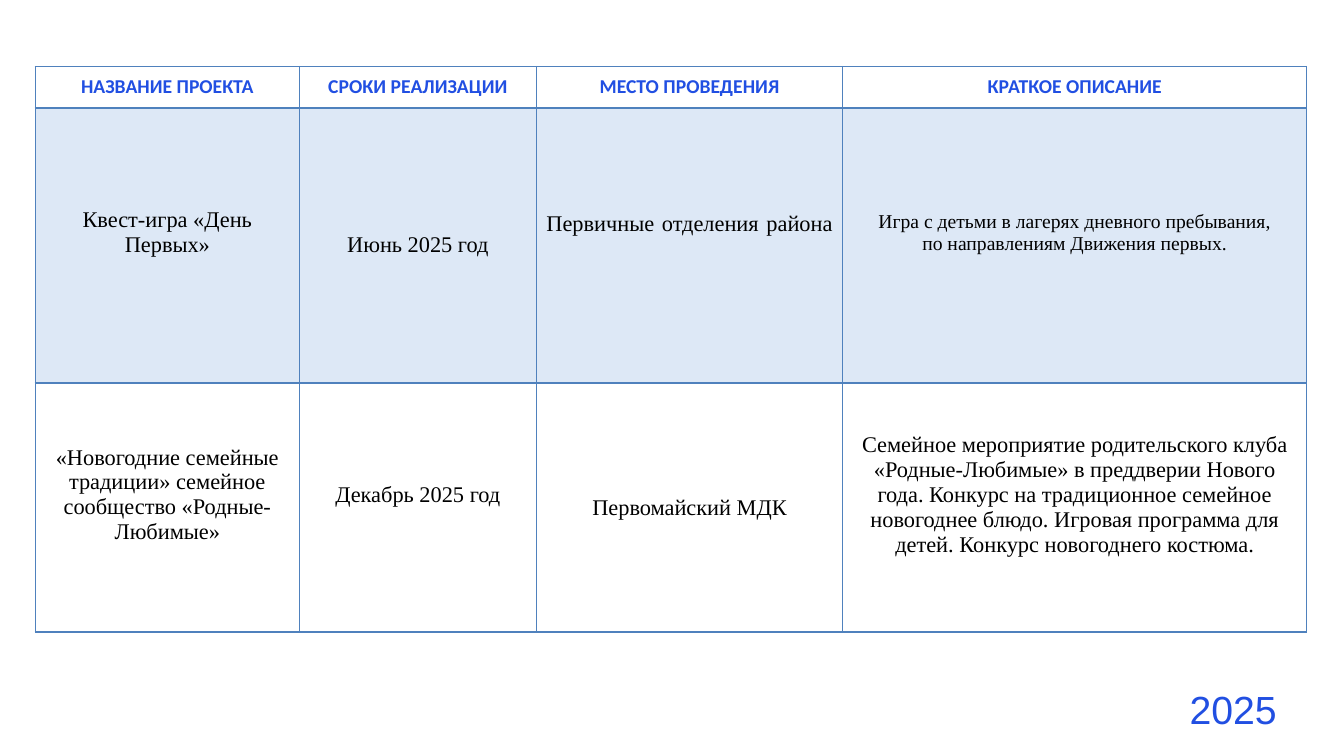
"""Build the slide with the table of 2025 projects."""
import dataclasses

import lxml.etree
import pptx
import pptx.dml.color
import pptx.enum.text
import pptx.oxml.ns
import pptx.util

Inches = pptx.util.Inches
Pt = pptx.util.Pt
Align = pptx.enum.text.PP_ALIGN
Anchor = pptx.enum.text.MSO_ANCHOR
qn = pptx.oxml.ns.qn


@dataclasses.dataclass(frozen=True)
class Theme:
    """Colours, fonts and type sizes of the slide."""
    accent: str = "214FE2"
    ink: str = "000000"
    border: str = "4F81BD"
    band: str = "558ED5"
    band_alpha: int = 20
    heading_font: str = "Calibri"
    body_font: str = "Times New Roman"
    year_font: str = "Arial"
    small: int = 14
    normal: int = 16
    large: int = 28


def solid_line(tag, color, width):
    """Return a solid line element of the given tag, colour and width in points."""
    line = lxml.etree.Element(qn(tag), w=str(Pt(width)))
    fill = lxml.etree.SubElement(line, qn("a:solidFill"))
    lxml.etree.SubElement(fill, qn("a:srgbClr"), val=color)
    return line


def write_text(frame, text, *, font, size, color, bold=False, align=Align.CENTER, outline=None):
    """Fill a text frame with one paragraph per line of text."""
    frame.word_wrap = True
    for index, line in enumerate(text.split("\n")):
        para = frame.add_paragraph() if index else frame.paragraphs[0]
        para.text = line
        para.alignment = align
        for span in para.runs:
            span.font.name = font
            span.font.size = Pt(size)
            span.font.bold = bold
            span.font.color.rgb = pptx.dml.color.RGBColor.from_string(color)
            if outline:
                span.font._element.insert(0, solid_line("a:ln", color, outline))


class ProjectPage:
    """Hold the theme and the current slide, and draw its elements."""

    def __init__(self, deck, theme):
        """Add a blank slide to the deck."""
        self.theme = theme
        self.page = deck.slides.add_slide(deck.slide_layouts[6])

    def text_box(self, text, left, top, width, height, **style):
        """Add a text box centred vertically."""
        box = self.page.shapes.add_textbox(Inches(left), Inches(top), Inches(width), Inches(height))
        box.text_frame.vertical_anchor = Anchor.MIDDLE
        write_text(box.text_frame, text, **style)

    def table(self, left, top, widths, heights):
        """Add an unbanded table with the given column widths and row heights."""
        frame = self.page.shapes.add_table(
            len(heights), len(widths), Inches(left), Inches(top),
            Inches(sum(widths)), Inches(sum(heights)))
        table = frame.table
        table.first_row = table.horz_banding = False
        for column, width in zip(table.columns, widths):
            column.width = Inches(width)
        for row, height in zip(table.rows, heights):
            row.height = Inches(height)
        return table

    def cell(self, cell, text, *, banded=False, top_line=1, bottom_line=1,
             anchor=Anchor.MIDDLE, margin_top=0.05, margin_bottom=0.05, **style):
        """Fill, border and write one table cell."""
        cell.vertical_anchor = anchor
        cell.margin_top = Inches(margin_top)
        cell.margin_bottom = Inches(margin_bottom)
        write_text(cell.text_frame, text, **style)
        properties = cell._tc.get_or_add_tcPr()
        if banded:
            cell.fill.solid()
            cell.fill.fore_color.rgb = pptx.dml.color.RGBColor.from_string(self.theme.band)
            color = properties.find(".//" + qn("a:srgbClr"))
            lxml.etree.SubElement(color, qn("a:alpha"), val=str(self.theme.band_alpha * 1000))
        else:
            cell.fill.background()
        sides = {"a:lnL": 1, "a:lnR": 1, "a:lnT": top_line, "a:lnB": bottom_line}
        for index, (tag, width) in enumerate(sides.items()):
            properties.insert(index, solid_line(tag, self.theme.border, width))


def main():
    """Build and save the deck."""
    deck = pptx.Presentation()
    deck.slide_width, deck.slide_height = Inches(13.33), Inches(7.5)
    theme = Theme()
    page = ProjectPage(deck, theme)

    page.text_box("2025", 9.37, 6.74, 3.39, 0.58, font=theme.year_font,
                  size=theme.large, color=theme.accent, align=Align.RIGHT)

    raised = {"margin_bottom": 0.3}
    headings = ["НАЗВАНИЕ ПРОЕКТА", "СРОКИ РЕАЛИЗАЦИИ", "МЕСТО ПРОВЕДЕНИЯ", "КРАТКОЕ ОПИСАНИЕ"]
    projects = [
        [("Квест-игра «День Первых»", raised),
         ("Июнь 2025 год", {}),
         ("Первичные отделения района\v",
          {"anchor": Anchor.TOP, "margin_top": 1.03, "align": Align.JUSTIFY}),
         ("Игра с детьми в лагерях дневного пребывания,\nпо направлениям Движения первых.",
          {"size": theme.small, **raised})],
        [("«Новогодние семейные традиции» семейное сообщество «Родные-Любимые»", raised),
         ("Декабрь 2025 год", raised),
         ("Первомайский МДК", {}),
         ("Семейное мероприятие родительского клуба «Родные-Любимые» в преддверии Нового года. "
          "Конкурс на традиционное семейное новогоднее блюдо. Игровая программа для детей. "
          "Конкурс новогоднего костюма.", raised)],
    ]
    table = page.table(0.35, 0.66, [2.62, 2.35, 3.04, 4.6], [0.41, 2.73, 2.47])
    for column, heading in enumerate(headings):
        page.cell(table.cell(0, column), heading, bottom_line=2, font=theme.heading_font,
                  size=theme.small, color=theme.accent, bold=True, outline=0.75)
    body = {"font": theme.body_font, "size": theme.normal, "color": theme.ink}
    for row, project in enumerate(projects, start=1):
        first = row == 1
        for column, (text, style) in enumerate(project):
            page.cell(table.cell(row, column), text, banded=first,
                      top_line=2 if first else 1, **{**body, **style})

    deck.save("out.pptx")


if __name__ == "__main__":
    main()
